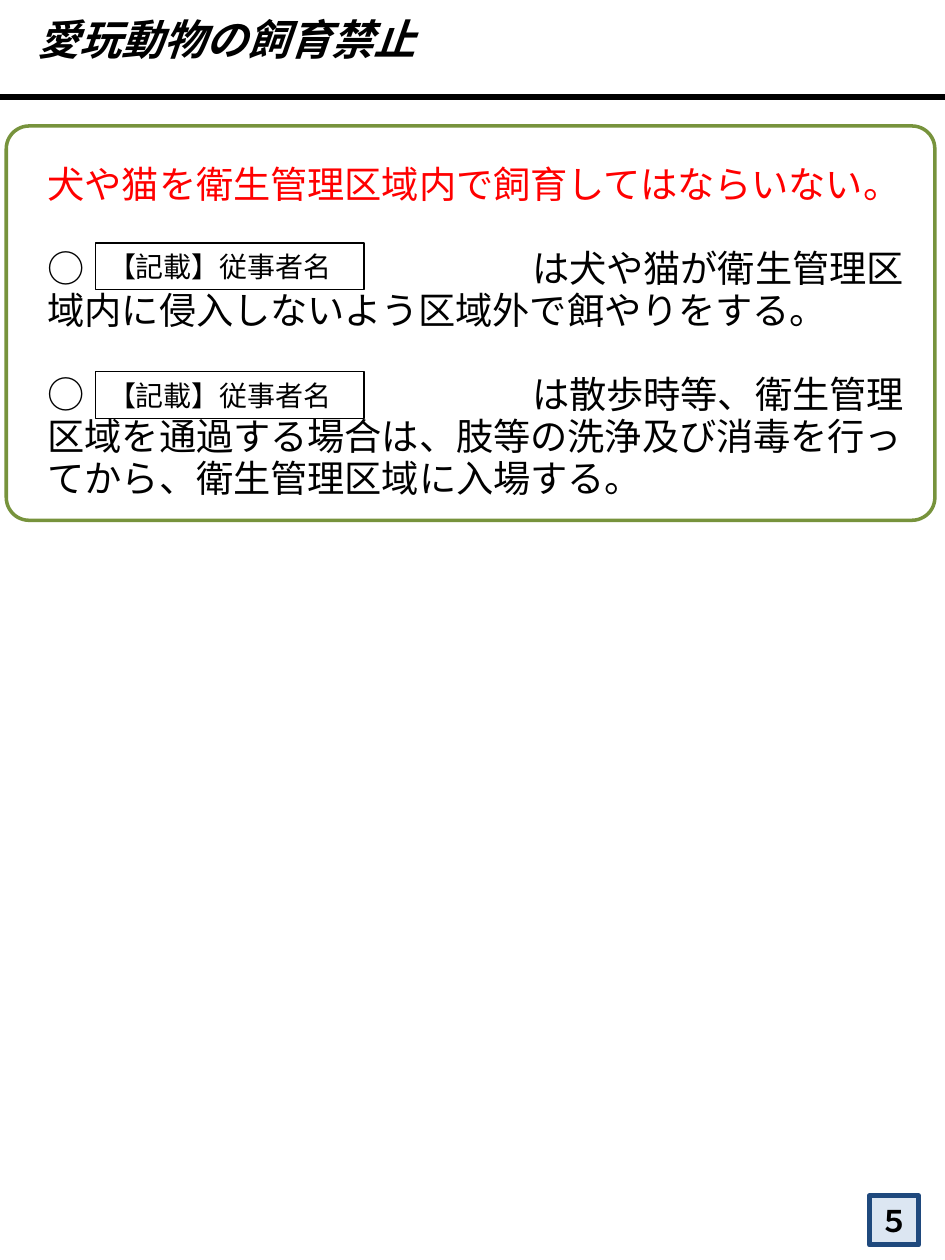
from dataclasses import dataclass
from typing import Any, Optional

import pptx
import pptx.dml.color
import pptx.enum.shapes
import pptx.enum.text
import pptx.oxml.ns
import pptx.util
from lxml import etree

SHAPES = pptx.enum.shapes.MSO_SHAPE
ANCHORS = pptx.enum.text.MSO_ANCHOR
ALIGNMENTS = pptx.enum.text.PP_ALIGN

COLUMNS, ROWS = 75, 100
CELL = pptx.util.Inches(0.1)


@dataclass(frozen=True)
class Theme:
    black: str = "000000"
    red: str = "FF0000"
    green: str = "77933C"
    navy: str = "1F497D"
    pale_blue: str = "DCE6F2"
    latin_font: str = "Arial"
    number_font: str = "Calibri"
    japanese_font: str = "Noto Sans CJK JP"
    title_size: float = 24
    body_size: float = 21.3
    entry_size: float = 16
    number_size: float = 17
    line_pitch: float = 24


THEME = Theme()


@dataclass(frozen=True)
class Area:
    """A rectangle in columns and rows of the slide grid."""
    column: float
    row: float
    width: float
    height: float

    def lengths(self) -> list[int]:
        return [cells(n) for n in (self.column, self.row, self.width, self.height)]


@dataclass(frozen=True)
class Box:
    area: Area
    line: str
    line_width: float
    preset: Any = SHAPES.RECTANGLE
    fill: Optional[str] = None
    corner: Optional[float] = None


@dataclass(frozen=True)
class Rule:
    text: str
    color: str


PANEL = Box(Area(0.5, 10, 73.7, 31.3), THEME.green, 2, SHAPES.ROUNDED_RECTANGLE, corner=0.058)
PAGE_BOX = Box(Area(69, 94.9, 3.9, 3.9), THEME.navy, 3, fill=THEME.pale_blue)
ENTRY_ROWS = (19.3, 29.5)
RULES = (
    Rule("犬や猫を衛生管理区域内で飼育してはならいない。", THEME.red),
    Rule("○\tは犬や猫が衛生管理区域内に侵入しないよう区域外で餌やりをする。", THEME.black),
    Rule("○\tは散歩時等、衛生管理区域を通過する場合は、肢等の洗浄及び消毒を行ってから、"
         "衛生管理区域に入場する。", THEME.black),
)


def cells(count: float) -> int:
    return round(count * CELL)


def rgb(color: str) -> pptx.dml.color.RGBColor:
    return pptx.dml.color.RGBColor.from_string(color)


def set_frame(frame: Any, anchor: Any, side: float, top: float) -> None:
    """Wrap the text and set its anchor and its insets in grid cells."""
    frame.word_wrap = True
    frame.auto_size = pptx.enum.text.MSO_AUTO_SIZE.NONE
    frame.vertical_anchor = anchor
    frame.margin_left = frame.margin_right = cells(side)
    frame.margin_top = frame.margin_bottom = cells(top)


def write(paragraph: Any, text: str, *, size: float, font: str = THEME.latin_font,
          color: str = THEME.black, bold: bool = False, italic: bool = False,
          align: Any = ALIGNMENTS.LEFT) -> None:
    paragraph.alignment = align
    run = paragraph.add_run()
    run.text = text
    run.font.name = font
    run.font.size = pptx.util.Pt(size)
    run.font.bold, run.font.italic = bold, italic
    run.font.color.rgb = rgb(color)
    east_asian = etree.Element(pptx.oxml.ns.qn("a:ea"), typeface=THEME.japanese_font)
    run.font._element.find(pptx.oxml.ns.qn("a:latin")).addnext(east_asian)


def add_tab_stop(paragraph: Any, position: int) -> None:
    properties = paragraph._p.get_or_add_pPr()
    stops = etree.SubElement(properties, pptx.oxml.ns.qn("a:tabLst"))
    etree.SubElement(stops, pptx.oxml.ns.qn("a:tab"), pos=str(position), algn="l")


def add_box(slide: Any, box: Box) -> Any:
    shape = slide.shapes.add_shape(box.preset, *box.area.lengths())
    shape.shadow.inherit = False
    if box.corner is not None:
        shape.adjustments[0] = box.corner
    if box.fill:
        shape.fill.solid()
        shape.fill.fore_color.rgb = rgb(box.fill)
    else:
        shape.fill.background()
    shape.line.color.rgb = rgb(box.line)
    shape.line.width = pptx.util.Pt(box.line_width)
    return shape


def add_title(slide: Any, text: str) -> None:
    title = slide.shapes.title
    title.left, title.top, title.width, title.height = Area(1.8, 0.5, 54.6, 9.3).lengths()
    set_frame(title.text_frame, ANCHORS.TOP, 1.2, 0.6)
    write(title.text_frame.paragraphs[0], text, size=THEME.title_size, bold=True, italic=True)

    underline = slide.shapes.add_connector(
        pptx.enum.shapes.MSO_CONNECTOR.STRAIGHT, 0, cells(7.7), cells(COLUMNS), cells(7.7))
    underline.line.color.rgb = rgb(THEME.black)
    underline.line.width = pptx.util.Pt(3)
    etree.SubElement(underline._element.spPr, pptx.oxml.ns.qn("a:effectLst"))


def add_rules(slide: Any) -> None:
    pitch = pptx.util.Pt(THEME.line_pitch)
    frame = slide.shapes.add_textbox(*Area(2.8, 9.2, 71.4, 34.3).lengths()).text_frame
    set_frame(frame, ANCHORS.TOP, 1, 0.5)
    frame.margin_top += pitch
    for index, rule in enumerate(RULES):
        paragraph = frame.add_paragraph() if index else frame.paragraphs[0]
        paragraph.line_spacing = pitch
        if index:
            paragraph.space_before = pitch
        if "\t" in rule.text:
            add_tab_stop(paragraph, pptx.util.Pt(13 * THEME.body_size))
        write(paragraph, rule.text, size=THEME.body_size, color=rule.color)


def add_entry(slide: Any, row: float) -> None:
    """Draw a field where the worker's name is filled in."""
    frame = add_box(slide, Box(Area(7.6, row, 21.3, 3.7), THEME.black, 0.75)).text_frame
    set_frame(frame, ANCHORS.MIDDLE, 1, 0)
    write(frame.paragraphs[0], "【記載】従事者名", size=THEME.entry_size,
          font=THEME.japanese_font)


def add_page_number(slide: Any, number: str) -> None:
    frame = add_box(slide, PAGE_BOX).text_frame
    set_frame(frame, ANCHORS.MIDDLE, 0, 0)
    write(frame.paragraphs[0], number, size=THEME.number_size, font=THEME.number_font,
          bold=True, align=ALIGNMENTS.CENTER)


def main() -> None:
    presentation = pptx.Presentation()
    presentation.slide_width, presentation.slide_height = cells(COLUMNS), cells(ROWS)
    title_only = presentation.slide_layouts.get_by_name("Title Only")
    slide = presentation.slides.add_slide(title_only)
    add_title(slide, "愛玩動物の飼育禁止")
    add_rules(slide)
    add_page_number(slide, "５")
    add_box(slide, PANEL)
    for row in ENTRY_ROWS:
        add_entry(slide, row)
    presentation.save("out.pptx")


if __name__ == "__main__":
    main()
